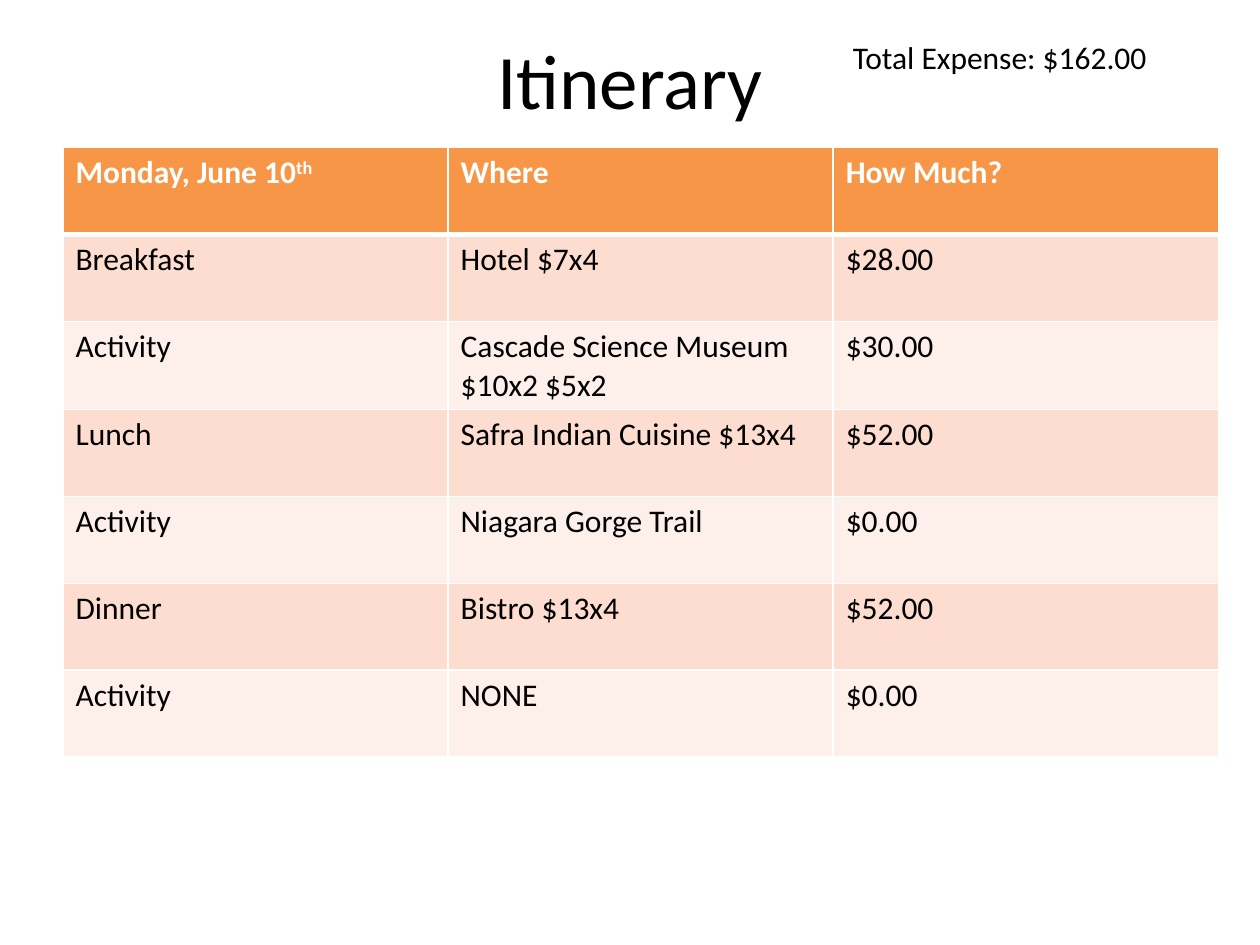
from dataclasses import dataclass

from lxml import etree
from pptx import Presentation
from pptx import util as u
from pptx.dml.color import RGBColor
from pptx.enum import text
from pptx.oxml.ns import qn


@dataclass(frozen=True)
class Theme:
    font: str = "Calibri"
    title_size: int = 44
    body_size: int = 18
    ink: str = "000000"
    white: str = "FFFFFF"
    header: str = "F79646"
    bands: tuple = ("FCDDCF", "FDEFE9")
    rule: float = 1
    header_rule: float = 3


THEME = Theme()


def add_text(paragraph, content, size=THEME.body_size, color=THEME.ink,
             bold=False, baseline=None):
    run = paragraph.add_run()
    run.text = content
    run.font.name = THEME.font
    run.font.size = u.Pt(size)
    run.font.bold = bold
    run.font.color.rgb = RGBColor.from_string(color)
    if baseline:
        run.font._element.set("baseline", str(baseline * 1000))


def set_border(cell, side, color, width):
    line = etree.SubElement(cell._tc.get_or_add_tcPr(), qn(f"a:ln{side}"),
                            w=str(u.Pt(width)))
    fill = etree.SubElement(line, qn("a:solidFill"))
    etree.SubElement(fill, qn("a:srgbClr"), val=color)


class SlideBuilder:
    def __init__(self, slide, theme):
        self.slide = slide
        self.theme = theme

    def text_box(self, content, left, top, width, height, centered=False, **style):
        shape = self.slide.shapes.add_textbox(
            *map(u.Inches, (left, top, width, height)))
        frame = shape.text_frame
        frame.word_wrap = True
        paragraph = frame.paragraphs[0]
        if centered:
            frame.vertical_anchor = text.MSO_ANCHOR.MIDDLE
            paragraph.alignment = text.PP_ALIGN.CENTER
        add_text(paragraph, content, **style)

    def table(self, rows, left, top, width, height):
        table = self.slide.shapes.add_table(
            len(rows), len(rows[0]),
            *map(u.Inches, (left, top, width, height))).table
        for row_index, row in enumerate(rows):
            for column_index, content in enumerate(row):
                self.cell(table.cell(row_index, column_index), content, row_index)

    def cell(self, cell, content, row_index):
        theme = self.theme
        is_header = row_index == 0
        # The rule between header and body is thicker than the others
        for side in "LRTB":
            heavy = (side, row_index) in (("B", 0), ("T", 1))
            set_border(cell, side, theme.white,
                       theme.header_rule if heavy else theme.rule)
        cell.fill.solid()
        fill = theme.header if is_header else theme.bands[(row_index - 1) % 2]
        cell.fill.fore_color.rgb = RGBColor.from_string(fill)
        # A tuple holds the text and its superscript
        main, superscript = content if isinstance(content, tuple) else (content, "")
        style = dict(color=theme.white if is_header else theme.ink, bold=is_header)
        paragraph = cell.text_frame.paragraphs[0]
        add_text(paragraph, main, **style)
        if superscript:
            add_text(paragraph, superscript, baseline=30, **style)


ITINERARY = [
    (("Monday, June 10", "th"), "Where", "How Much?"),
    ("Breakfast", "Hotel $7x4", "$28.00"),
    ("Activity", "Cascade Science Museum $10x2 $5x2", "$30.00"),
    ("Lunch", "Safra Indian Cuisine $13x4", "$52.00"),
    ("Activity", "Niagara Gorge Trail", "$0.00"),
    ("Dinner", "Bistro $13x4", "$52.00"),
    ("Activity", "NONE", "$0.00"),
]


def main():
    presentation = Presentation()
    presentation.slide_width = u.Inches(10)
    presentation.slide_height = u.Inches(7.5)
    slide = presentation.slides.add_slide(presentation.slide_layouts[6])
    builder = SlideBuilder(slide, THEME)

    # Heading and total
    builder.text_box("Itinerary", 0.5, 0, 9, 1.25, centered=True,
                     size=THEME.title_size)
    builder.text_box("Total Expense: $162.00", 6.67, 0.25, 3.08, 0.4)

    # Day plan
    builder.table(ITINERARY, 0.5, 1.17, 9.17, 4.83)

    presentation.save("out.pptx")


if __name__ == "__main__":
    main()
